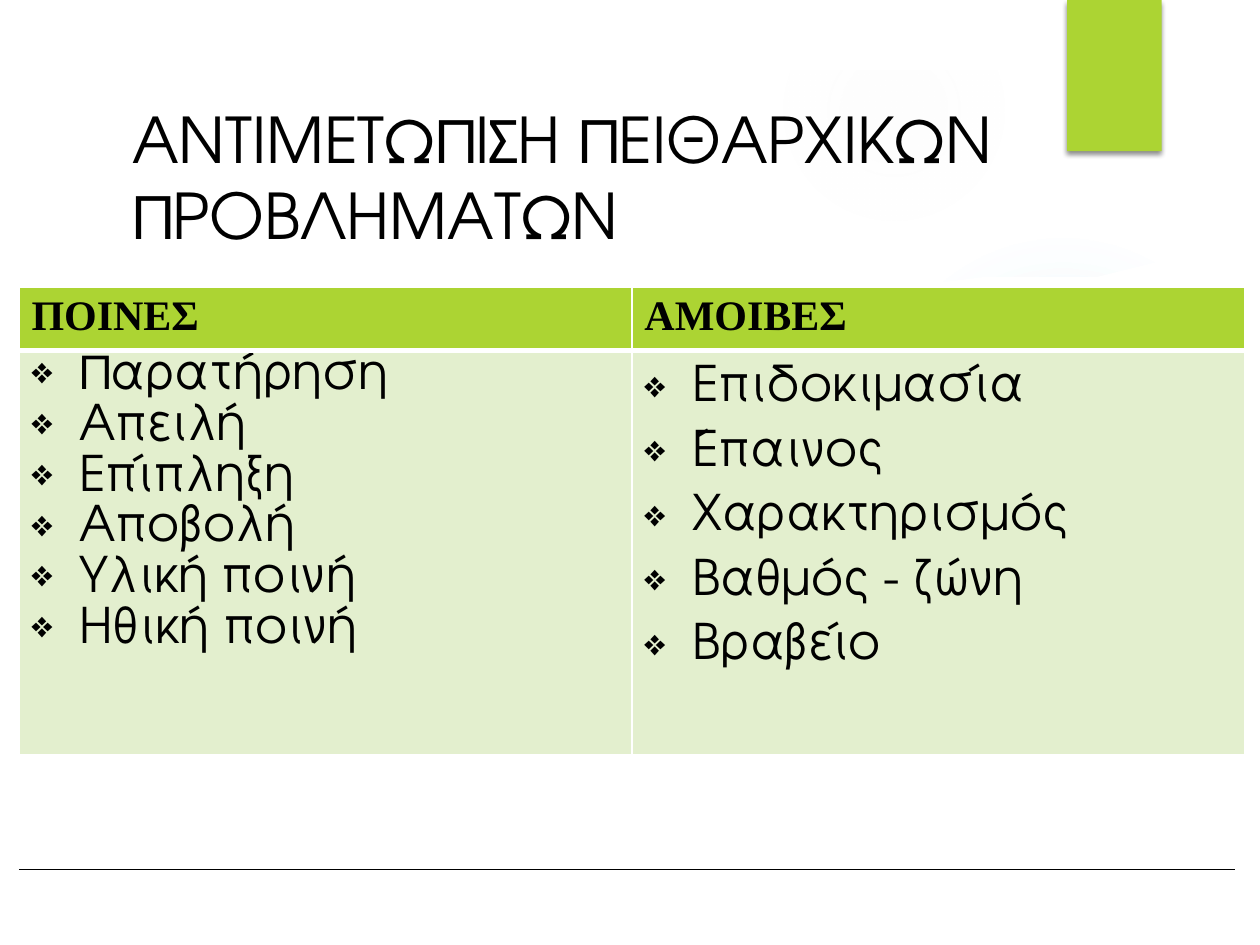
from dataclasses import dataclass

import pptx
import pptx.dml.color
import pptx.enum.shapes
import pptx.enum.text
import pptx.oxml
import pptx.oxml.ns
import pptx.util
from lxml import etree

COLORS = {"green": "ACD433", "pale": "E3EFCE", "white": "FFFFFF",
          "black": "000000", "sky": "75CEEC", "mist": "F7F7F7"}
DISPLAY, SERIF = "TeX Gyre Adventor", "Times New Roman"
COLUMNS, ROWS, UNIT = 100, 75, 0.1  # slide grid: square cells of 0.1 inch
MARGIN = 5.6
SHAPES = pptx.enum.shapes.MSO_SHAPE
qn = pptx.oxml.ns.qn


@dataclass
class Glow:
    left: float
    top: float
    size: float
    color: str
    stops: tuple  # (position %, opacity %)


@dataclass
class Topic:
    heading: str
    items: tuple
    line_spacing: float


GLOWS = (
    Glow(68.9, 18.3, 30.8, "sky", ((0, 7), (36, 6), (69, 0))),
    Glow(0, 29.2, 45.8, "sky", ((0, 11), (36, 10), (75, 0))),
    Glow(62.2, 0, 17.5, "mist", ((0, 14), (36, 7), (73, 0))),
    Glow(68.9, 64.2, 10.8, "mist", ((0, 14), (36, 7), (66, 0))),
    Glow(0, 31.7, 25.8, "sky", ((0, 8), (36, 8), (72, 0))),
)
TOPICS = (
    Topic("ΠΟΙΝΕΣ", ("Παρατήρηση", "Απειλή", "Επίπληξη", "Αποβολή",
                     "Υλική ποινή", "Ηθική ποινή"), 0.9),
    Topic("ΑΜΟΙΒΕΣ", ("Επιδοκιμασία", "Έπαινος", "Χαρακτηρισμός",
                      "Βαθμός - ζώνη", "Βραβείο"), 1.2),
)
PANEL_EDGE = ((94.7, 20.3), (86.6, 21.5), (78.5, 22.4), (70.4, 22.9),
              (62.5, 23.3), (54.8, 23.4), (47.4, 23.4), (40.4, 23.3),
              (33.8, 23), (27.7, 22.6), (22.2, 22.2), (13.2, 21.3), (5.3, 20.3))


def grid(cells: float) -> int:
    return pptx.util.Inches(cells * UNIT)


def rgb(name: str) -> pptx.dml.color.RGBColor:
    return pptx.dml.color.RGBColor.from_string(COLORS[name])


def xml(body: str):
    """Parse an element whose a: prefix is the drawing namespace."""
    head, tail = body.split(" ", 1)
    return pptx.oxml.parse_xml(f"{head} {pptx.oxml.ns.nsdecls('a')} {tail}")


def solid(shape, color: str):
    shape.shadow.inherit = False
    shape.fill.solid()
    shape.fill.fore_color.rgb = rgb(color)
    shape.line.fill.background()
    return shape


def add_block(slide, kind, left: float, top: float, width: float, height: float, color: str):
    return solid(slide.shapes.add_shape(kind, grid(left), grid(top), grid(width), grid(height)), color)


def add_glow(slide, glow: Glow) -> None:
    shape = add_block(slide, SHAPES.OVAL, glow.left, glow.top, glow.size, glow.size, glow.color)
    stops = "".join(f'<a:gs pos="{pos * 1000}"><a:srgbClr val="{COLORS[glow.color]}">'
                    f'<a:alpha val="{alpha * 1000}"/></a:srgbClr></a:gs>' for pos, alpha in glow.stops)
    gradient = xml(f'<a:gradFill rotWithShape="1"><a:gsLst>{stops}</a:gsLst><a:path path="circle">'
                   '<a:fillToRect l="50000" t="50000" r="50000" b="50000"/></a:path></a:gradFill>')
    properties = shape.element.spPr
    properties.replace(properties.find(qn("a:solidFill")), gradient)


def write(frame, text: str, *, font: str, size: float, bold: bool = False,
          bullet: str = "", spacing: float = 1.0, first: bool = True) -> None:
    paragraph = frame.paragraphs[0] if first else frame.add_paragraph()
    paragraph.line_spacing = spacing
    if bullet:
        properties = paragraph._p.get_or_add_pPr()
        indent = pptx.util.Inches(0.38)
        properties.set("marL", str(indent))
        properties.set("indent", str(-indent))
        if not first:
            properties.append(xml('<a:spcBef ><a:spcPct val="20000"/></a:spcBef>'))
        properties.append(xml('<a:buSzPct val="75000"/>'))
        properties.append(xml(f'<a:buChar char="{bullet}"/>'))
    run = paragraph.add_run()
    run.text = text
    run.font.name, run.font.size, run.font.bold = font, pptx.util.Pt(size), bold
    run.font.color.rgb = rgb("black")


def style_cell(cell, color: str, top: float, bottom: float) -> None:
    cell.fill.solid()
    cell.fill.fore_color.rgb = rgb(color)
    properties = cell._tc.get_or_add_tcPr()
    for place, (side, points) in enumerate((("L", 1), ("R", 1), ("T", top), ("B", bottom))):
        properties.insert(place, xml(
            f'<a:ln{side} w="{pptx.util.Pt(points)}"><a:solidFill>'
            f'<a:srgbClr val="{COLORS["white"]}"/></a:solidFill></a:ln{side}>'))


def add_backdrop(slide) -> None:
    for glow in GLOWS:
        add_glow(slide, glow)
    # White panel with a curved upper edge
    builder = slide.shapes.build_freeform(5.3, 69.9, scale=grid(1))
    builder.add_line_segments(((94.7, 69.9),) + PANEL_EDGE, close=True)
    solid(builder.convert_to_shape(), "white")
    # White frame around the slide
    frame = add_block(slide, SHAPES.FRAME, 0, 0, COLUMNS, ROWS, "white")
    frame.adjustments[0] = MARGIN / ROWS
    # Green tab with a soft shadow
    tab = add_block(slide, SHAPES.RECTANGLE, 84.7, 0, 7.5, 12, "green")
    tab.element.spPr.find(qn("a:effectLst")).append(xml(
        f'<a:outerShdw blurRad="{pptx.util.Pt(3)}" dist="{pptx.util.Pt(2)}" dir="5400000" '
        f'rotWithShape="0"><a:srgbClr val="{COLORS["black"]}"><a:alpha val="45000"/>'
        '</a:srgbClr></a:outerShdw>'))
    # Footer rule
    rule = slide.shapes.add_connector(pptx.enum.shapes.MSO_CONNECTOR.STRAIGHT,
                                      grid(1.5), grid(69), grid(98), grid(69))
    rule.line.color.rgb = rgb("black")
    rule.line.width = pptx.util.Pt(1)
    etree.SubElement(rule._element.spPr, qn("a:effectLst"))


def add_title(slide, text: str) -> None:
    title = slide.shapes.add_textbox(grid(9.5), grid(10.1), grid(81.4), grid(7.8)).text_frame
    title.word_wrap = True
    title.vertical_anchor = pptx.enum.text.MSO_ANCHOR.MIDDLE
    write(title, text, font=DISPLAY, size=36)


def add_topics(slide, topics: tuple) -> None:
    heights = (4.6, 25.7)
    table = slide.shapes.add_table(2, len(topics), grid(1.5), grid(22.8),
                                   grid(97.3), grid(sum(heights))).table
    table.first_row = table.horz_banding = False
    for row, height in zip(table.rows, heights):
        row.height = grid(height)
    for column, topic in enumerate(topics):
        heading, body = table.cell(0, column), table.cell(1, column)
        style_cell(heading, "green", top=1, bottom=3)
        write(heading.text_frame, topic.heading, font=SERIF, size=24, bold=True)
        style_cell(body, "pale", top=3, bottom=1)
        for index, item in enumerate(topic.items):
            write(body.text_frame, item, font=DISPLAY, size=28, bullet="❖",
                  spacing=topic.line_spacing, first=index == 0)


def main() -> None:
    deck = pptx.Presentation()
    deck.slide_width, deck.slide_height = grid(COLUMNS), grid(ROWS)
    slide = deck.slides.add_slide(deck.slide_layouts[6])
    add_backdrop(slide)
    add_title(slide, "ΑΝΤΙΜΕΤΩΠΙΣΗ ΠΕΙΘΑΡΧΙΚΩΝ ΠΡΟΒΛΗΜΑΤΩΝ")
    add_topics(slide, TOPICS)
    deck.save("out.pptx")


if __name__ == "__main__":
    main()
